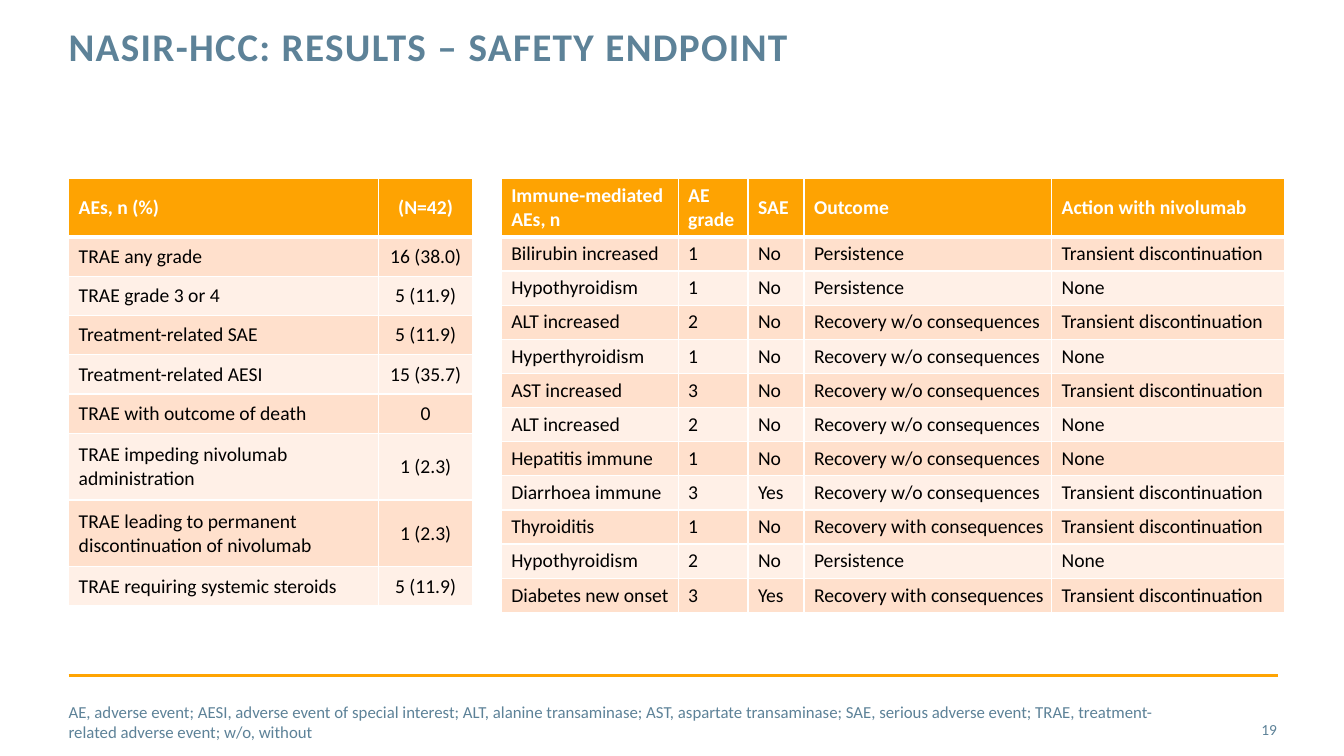
from lxml import etree
from pptx import Presentation
from pptx.dml.color import RGBColor
from pptx.enum.shapes import MSO_CONNECTOR
from pptx.enum.text import MSO_ANCHOR, PP_ALIGN
from pptx.oxml.ns import qn
from pptx.util import Cm, Pt

WHITE = RGBColor(0xFF, 0xFF, 0xFF)
BLACK = RGBColor(0x00, 0x00, 0x00)
SLATE = RGBColor(0x5D, 0x82, 0x98)
AMBER = RGBColor(0xFF, 0xA4, 0x02)
HEADER_FILL = RGBColor(0xFE, 0xA3, 0x02)
BAND_FILLS = (RGBColor(0xFF, 0xE0, 0xCC), RGBColor(0xFF, 0xF0, 0xE7))

FONT = "Calibri"
LEFT = 1.73
TABLE_TOP = 4.5

ADVERSE_EVENTS = [
    ("AEs, n (%)", "(N=42)"),
    ("TRAE any grade", "16 (38.0)"),
    ("TRAE grade 3 or 4", "5 (11.9)"),
    ("Treatment-related SAE", "5 (11.9)"),
    ("Treatment-related AESI", "15 (35.7)"),
    ("TRAE with outcome of death", "0"),
    ("TRAE impeding nivolumab administration", "1 (2.3)"),
    ("TRAE leading to permanent discontinuation of nivolumab", "1 (2.3)"),
    ("TRAE requiring systemic steroids", "5 (11.9)"),
]

PERSISTENCE = "Persistence"
RECOVERED = "Recovery w/o consequences"
SEQUELAE = "Recovery with consequences"
PAUSED = "Transient discontinuation"
IMMUNE_EVENTS = [
    ("Immune-mediated\nAEs, n", "AE\ngrade", "SAE", "Outcome", "Action with nivolumab"),
    ("Bilirubin increased", "1", "No", PERSISTENCE, PAUSED),
    ("Hypothyroidism", "1", "No", PERSISTENCE, "None"),
    ("ALT increased", "2", "No", RECOVERED, PAUSED),
    ("Hyperthyroidism", "1", "No", RECOVERED, "None"),
    ("AST increased", "3", "No", RECOVERED, PAUSED),
    ("ALT increased", "2", "No", RECOVERED, "None"),
    ("Hepatitis immune", "1", "No", RECOVERED, "None"),
    ("Diarrhoea immune", "3", "Yes", RECOVERED, PAUSED),
    ("Thyroiditis", "1", "No", SEQUELAE, PAUSED),
    ("Hypothyroidism", "2", "No", PERSISTENCE, "None"),
    ("Diabetes new onset", "3", "Yes", SEQUELAE, PAUSED),
]

FOOTNOTE = (
    "AE, adverse event; AESI, adverse event of special interest; "
    "ALT, alanine transaminase; AST, aspartate transaminase; "
    "SAE, serious adverse event; TRAE, treatment-related adverse event; "
    "w/o, without"
)


def style_paragraph(paragraph, size, color, bold=False, align=PP_ALIGN.LEFT):
    paragraph.alignment = align
    font = paragraph.font
    font.name, font.size, font.bold = FONT, Pt(size), bold
    font.color.rgb = color


def add_text(slide, text, left, top, width, height, size,
             bold=False, align=PP_ALIGN.LEFT, anchor=MSO_ANCHOR.MIDDLE):
    """Add a slate text box without margins and return its paragraph."""
    frame = slide.shapes.add_textbox(Cm(left), Cm(top), Cm(width), Cm(height)).text_frame
    frame.word_wrap = True
    frame.vertical_anchor = anchor
    frame.margin_left = frame.margin_right = frame.margin_top = frame.margin_bottom = 0
    paragraph = frame.paragraphs[0]
    paragraph.text = text
    style_paragraph(paragraph, size, SLATE, bold, align)
    return paragraph


def add_title(slide, text):
    title = add_text(slide, text, LEFT, 0.69, 24.28, 2.24, 28,
                     bold=True, anchor=MSO_ANCHOR.TOP)
    title.line_spacing = Pt(30)
    title.runs[0]._r.get_or_add_rPr().set("spc", "100")


def add_footer_rule(slide):
    rule = slide.shapes.add_connector(
        MSO_CONNECTOR.STRAIGHT, Cm(LEFT), Cm(17.02), Cm(32.21), Cm(17.02))
    rule.line.color.rgb = AMBER
    rule.line.width = Pt(2)
    etree.SubElement(rule._element.spPr, qn("a:effectLst"))


def set_white_borders(cell, top, bottom):
    """Draw white borders, with top and bottom widths in points."""
    properties = cell._tc.get_or_add_tcPr()
    for side, width in (("L", 1), ("R", 1), ("T", top), ("B", bottom)):
        border = etree.SubElement(properties, qn(f"a:ln{side}"), w=str(Pt(width)))
        fill = etree.SubElement(border, qn("a:solidFill"))
        etree.SubElement(fill, qn("a:srgbClr"), val=str(WHITE))


def fill_cell(cell, text, row, align, right_margin):
    header = row == 0
    set_white_borders(cell, top=3 if row == 1 else 1, bottom=3 if header else 1)
    cell.fill.solid()
    cell.fill.fore_color.rgb = HEADER_FILL if header else BAND_FILLS[(row - 1) % 2]
    cell.vertical_anchor = MSO_ANCHOR.MIDDLE
    cell.margin_right = Cm(right_margin)
    cell.text = text
    for paragraph in cell.text_frame.paragraphs:
        style_paragraph(paragraph, 14, WHITE if header else BLACK, header, align)


def add_event_table(slide, rows, left, widths, heights, aligns, right_margin):
    table = slide.shapes.add_table(
        len(rows), len(widths), Cm(left), Cm(TABLE_TOP),
        Cm(sum(widths)), Cm(sum(heights))).table
    table.horz_banding = False
    for column, width in zip(table.columns, widths):
        column.width = Cm(width)
    for row, (texts, height) in enumerate(zip(rows, heights)):
        table.rows[row].height = Cm(height)
        for column, (text, align) in enumerate(zip(texts, aligns)):
            fill_cell(table.cell(row, column), text, row, align, right_margin)


def main():
    presentation = Presentation()
    presentation.slide_width = Cm(33.87)
    presentation.slide_height = Cm(19.05)
    slide = presentation.slides.add_slide(presentation.slide_layouts[6])

    add_footer_rule(slide)
    add_text(slide, "19", 30.0, 17.86, 2.18, 1.02, 11, align=PP_ALIGN.RIGHT)
    add_title(slide, "NASIR-HCC: RESULTS – SAFETY ENDPOINT")
    add_text(slide, FOOTNOTE, LEFT, 17.68, 28.02, 1.02, 12)

    single, double, header = 0.99, 1.68, 1.47
    add_event_table(
        slide, ADVERSE_EVENTS, LEFT, widths=(7.81, 2.37),
        heights=[header] + [single] * 5 + [double] * 2 + [single],
        aligns=(PP_ALIGN.LEFT, PP_ALIGN.CENTER), right_margin=0.25)
    add_event_table(
        slide, IMMUNE_EVENTS, 12.63, widths=(4.46, 1.76, 1.41, 6.24, 5.87),
        heights=[header] + [0.86] * 11,
        aligns=[PP_ALIGN.LEFT] * 5, right_margin=0.05)

    presentation.save("out.pptx")


if __name__ == "__main__":
    main()
